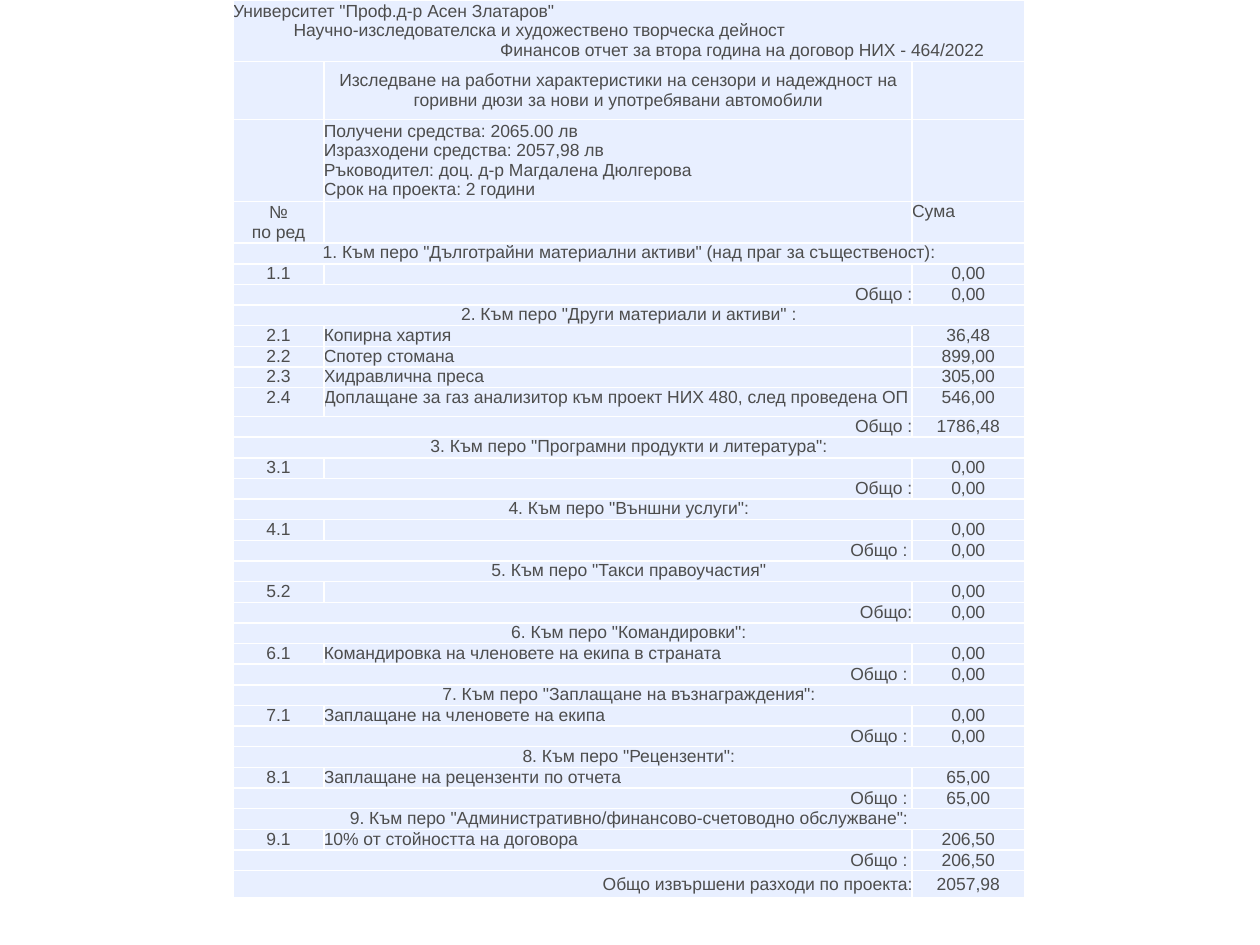
import dataclasses

import lxml.etree
import pptx
import pptx.dml.color
import pptx.enum.text
import pptx.oxml.ns
import pptx.util

ALIGN = pptx.enum.text.PP_ALIGN
ANCHOR = pptx.enum.text.MSO_ANCHOR


@dataclasses.dataclass(frozen=True)
class Theme:
    """Colours, type and grid of the report."""

    font: str = "Arial"
    size: float = 10
    ink: str = "4D4D4D"
    band: str = "E8EFFF"
    rule: str = "FFFFFF"
    rule_width: float = 1
    left: float = 1.85
    columns: tuple = (0.72, 4.67, 0.89)
    height: float = 7.13


@dataclasses.dataclass(frozen=True)
class Entry:
    """Text of one cell, with its span and placement."""

    text: str = ""
    align: ALIGN = ALIGN.CENTER
    anchor: ANCHOR = ANCHOR.MIDDLE
    span: int = 1
    indents: tuple = ()


THEME = Theme()

HEADING = Entry(
    'Университет "Проф.д-р Асен Златаров"\n'
    "Научно-изследователска и художествено творческа дейност\n"
    "Финансов отчет за втора година на договор НИХ - 464/2022",
    ALIGN.LEFT, span=3, indents=(0, 0.48, 2.12))
PROJECT = Entry("Изследване на работни характеристики на сензори и надеждност на "
                "горивни дюзи за нови и употребявани автомобили")
FUNDING = Entry("Получени средства: 2065.00 лв\n"
                "Изразходени средства: 2057,98 лв\n"
                "Ръководител: доц. д-р Магдалена Дюлгерова\n"
                "Срок на проекта: 2 години", ALIGN.LEFT)

SECTIONS = [
    ('1. Към перо "Дълготрайни материални активи" (над праг за същественост):',
     [("1.1", "", "0,00")], "Общо :", "0,00"),
    ('2. Към перо "Други материали и активи" :',
     [("2.1", "Копирна хартия", "36,48"),
      ("2.2", "Спотер стомана", "899,00"),
      ("2.3", "Хидравлична преса", "305,00"),
      ("2.4", "Доплащане за газ анализитор към проект НИХ 480, след проведена ОП",
       "546,00")], "Общо :", "1786,48"),
    ('3. Към перо "Програмни продукти и литература":',
     [("3.1", "", "0,00")], "Общо :", "0,00"),
    ('4. Към перо "Външни услуги":',
     [("4.1", "", "0,00")], "Общо : ", "0,00"),
    ('5. Към перо "Такси правоучастия"',
     [("5.2", "", "0,00")], "Общо:", "0,00"),
    ('6. Към перо "Командировки":',
     [("6.1", "Командировка на членовете на екипа в страната", "0,00")],
     "Общо : ", "0,00"),
    ('7. Към перо "Заплащане на възнаграждения":',
     [("7.1", "Заплащане на членовете на екипа", "0,00")], "Общо : ", "0,00"),
    ('8. Към перо "Рецензенти":',
     [("8.1", "Заплащане на рецензенти по отчета", "65,00")], "Общо : ", "65,00"),
    ('9. Към перо "Административно/финансово-счетоводно обслужване":',
     [("9.1", "10% от стойността на договора", "206,50")], "Общо : ", "206,50"),
]
SPECIAL_HEIGHTS = {0: 0.49, 1: 0.46, 2: 0.65, 3: 0.33, 11: 0.23, -1: 0.22}


def total_row(label, amount):
    """Return a total with its label across the first two columns."""
    return [Entry(label, ALIGN.RIGHT, span=2), Entry(amount)]


def section_rows(title, items, label, amount):
    """Return the title, item and total rows of one budget section."""
    rows = [[Entry(title, anchor=ANCHOR.TOP, span=3)]]
    for number, purpose, cost in items:
        rows.append([Entry(number, anchor=ANCHOR.TOP),
                     Entry(purpose, ALIGN.LEFT, ANCHOR.TOP),
                     Entry(cost, anchor=ANCHOR.TOP)])
    return rows + [total_row(label, amount)]


def report_rows():
    """Return every row of the report from heading to grand total."""
    rows = [[HEADING],
            [Entry(), PROJECT, Entry()],
            [Entry(), FUNDING, Entry()],
            [Entry("№\nпо ред"), Entry(), Entry("Сума", ALIGN.LEFT, ANCHOR.TOP)]]
    for section in SECTIONS:
        rows += section_rows(*section)
    return rows + [total_row("Общо извършени разходи по проекта:", "2057,98")]


def row_heights(count):
    """Share the height left by the special rows equally among the others."""
    special = {index % count: height for index, height in SPECIAL_HEIGHTS.items()}
    regular = (THEME.height - sum(special.values())) / (count - len(special))
    return [special.get(index, regular) for index in range(count)]


def add_borders(cell):
    """Rule all four sides of a cell."""
    properties = cell._tc.get_or_add_tcPr()
    qn = pptx.oxml.ns.qn
    for side in ("a:lnL", "a:lnR", "a:lnT", "a:lnB"):
        line = lxml.etree.SubElement(properties, qn(side),
                                     w=str(pptx.util.Pt(THEME.rule_width)))
        fill = lxml.etree.SubElement(line, qn("a:solidFill"))
        lxml.etree.SubElement(fill, qn("a:srgbClr"), val=THEME.rule)


def format_paragraph(paragraph, align, indent):
    """Set alignment, indent and type of one paragraph."""
    paragraph.alignment = align
    if indent:
        properties = paragraph._p.get_or_add_pPr()
        properties.set("marL", str(pptx.util.Inches(indent)))
        properties.set("indent", "0")
    paragraph.font.name = THEME.font
    paragraph.font.size = pptx.util.Pt(THEME.size)
    paragraph.font.color.rgb = pptx.dml.color.RGBColor.from_string(THEME.ink)
    if not paragraph.runs:
        lxml.etree.SubElement(paragraph._p, pptx.oxml.ns.qn("a:endParaRPr"),
                              sz=str(int(THEME.size * 100)))


def fill_cell(cell, entry):
    """Write an entry into a cell and format the cell."""
    add_borders(cell)
    cell.fill.solid()
    cell.fill.fore_color.rgb = pptx.dml.color.RGBColor.from_string(THEME.band)
    cell.margin_left = cell.margin_right = cell.margin_top = cell.margin_bottom = 0
    cell.vertical_anchor = entry.anchor
    cell.text_frame.text = entry.text
    for index, paragraph in enumerate(cell.text_frame.paragraphs):
        indent = entry.indents[index] if entry.indents else 0
        format_paragraph(paragraph, entry.align, indent)


def fill_row(report, row, entries):
    """Place entries along a row, merging cells where an entry spans several."""
    column = 0
    for entry in entries:
        last = column + entry.span - 1
        for position in range(column, last + 1):
            fill_cell(report.cell(row, position),
                      entry if position == column else Entry())
        if last > column:
            report.cell(row, column).merge(report.cell(row, last))
        column = last + 1


def add_report(slide, rows):
    """Add the financial report as a table."""
    inches = pptx.util.Inches
    report = slide.shapes.add_table(
        len(rows), len(THEME.columns), inches(THEME.left), 0,
        inches(sum(THEME.columns)), inches(THEME.height)).table
    report.first_row = report.horz_banding = False
    for column, width in zip(report.columns, THEME.columns):
        column.width = inches(width)
    for index, height in enumerate(row_heights(len(rows))):
        report.rows[index].height = inches(height)
        fill_row(report, index, rows[index])


def main():
    """Build the slide and save it."""
    presentation = pptx.Presentation()
    presentation.slide_width = pptx.util.Inches(10)
    presentation.slide_height = pptx.util.Inches(7.5)
    slide = presentation.slides.add_slide(presentation.slide_layouts[6])
    add_report(slide, report_rows())
    presentation.save("out.pptx")


if __name__ == "__main__":
    main()
